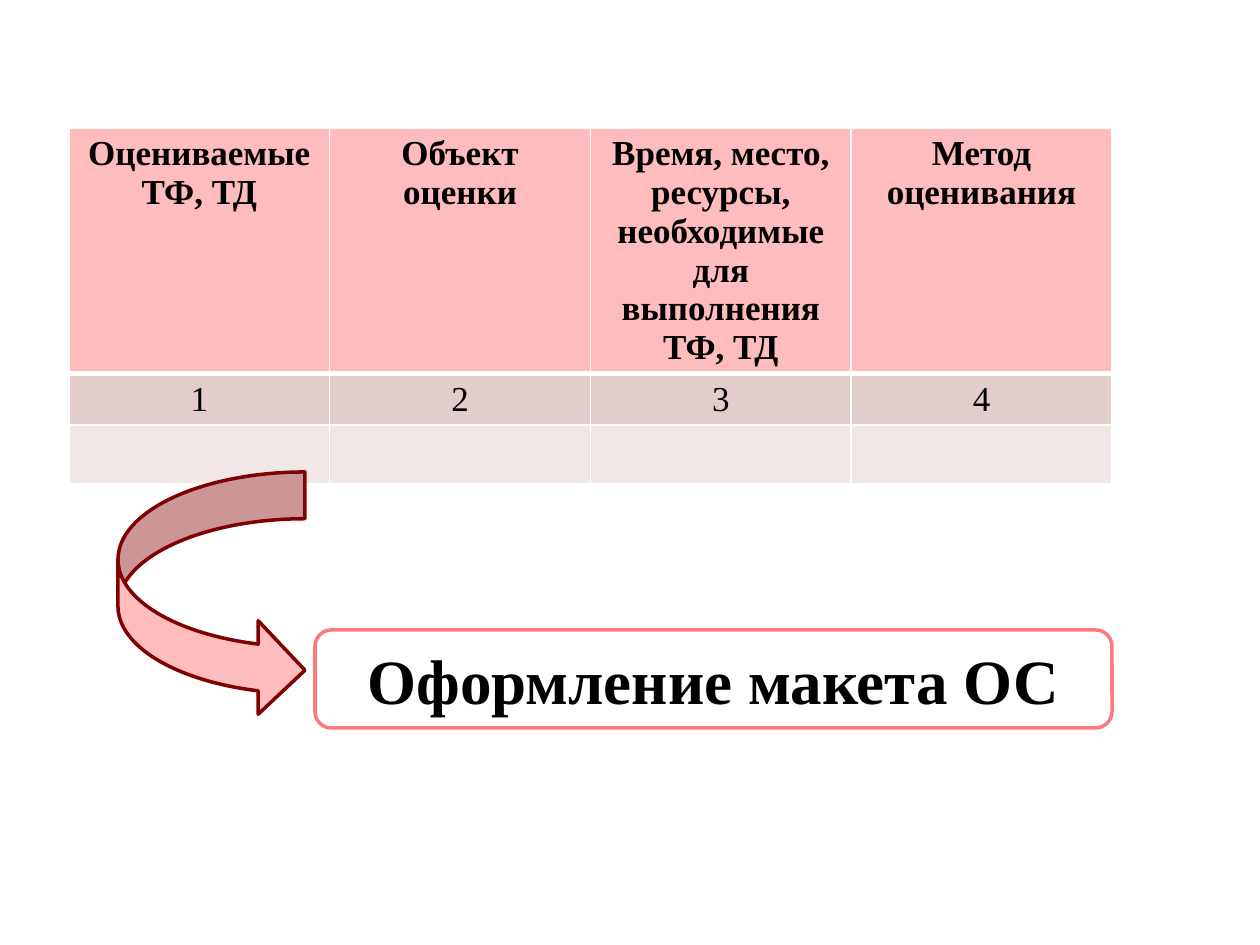
import pptx
import pptx.util
import pptx.dml.color
import pptx.enum.shapes
import pptx.enum.text
import pptx.oxml

PX = 914400 / 126
NS = "http://schemas.openxmlformats.org/drawingml/2006/main"


def rgb(h):
    return pptx.dml.color.RGBColor.from_string(h)


def add_text(tf, text, size, bold):
    p = tf.paragraphs[0]
    p.alignment = pptx.enum.text.PP_ALIGN.CENTER
    r = p.add_run()
    r.text = text
    r.font.name = "Times New Roman"
    r.font.size = pptx.util.Pt(size)
    r.font.bold = bold
    r.font.color.rgb = rgb("000000")


prs = pptx.Presentation()
prs.slide_width = int(1260 * PX)
prs.slide_height = int(945 * PX)
s = prs.slides.add_slide(prs.slide_layouts[6])

rows = [
    (245, "FFBCBC", ["Оцениваемые ТФ, ТД", "Объект оценки",
                     "Время, место, ресурсы, необходимые для выполнения ТФ, ТД",
                     "Метод оценивания"]),
    (51, "E3CCCC", ["1", "2", "3", "4"]),
    (59, "F1E7E7", ["", "", "", ""]),
]
box = [int(v * PX) for v in (69, 128, 1043, 355)]
table = s.shapes.add_table(len(rows), 4, *box).table
for i, (height, fill, texts) in enumerate(rows):
    table.rows[i].height = int(height * PX)
    for j, text in enumerate(texts):
        cell = table.cell(i, j)
        if text:
            add_text(cell.text_frame, text, 20, i == 0)
        tcPr = cell._tc.get_or_add_tcPr()
        for side in "LRTB":
            heavy = (i, side) in ((0, "B"), (1, "T"))
            width = pptx.util.Pt(3 if heavy else 1)
            tcPr.append(pptx.oxml.parse_xml(
                f'<a:ln{side} xmlns:a="{NS}" w="{width}"><a:solidFill>'
                f'<a:srgbClr val="FFFFFF"/></a:solidFill></a:ln{side}>'))
        cell.fill.solid()
        cell.fill.fore_color.rgb = rgb(fill)

MSO = pptx.enum.shapes.MSO_SHAPE
for kind, box, fill, line, text in [
    (MSO.CURVED_RIGHT_ARROW, (118, 472, 187, 245), "FFBCBC", "800101", ""),
    (MSO.ROUNDED_RECTANGLE, (315, 630, 797, 98), "FFFFFF", "FE7979", "Оформление макета ОС"),
]:
    sp = s.shapes.add_shape(kind, *[int(v * PX) for v in box])
    sp.shadow.inherit = False
    sp.fill.solid()
    sp.fill.fore_color.rgb = rgb(fill)
    sp.line.color.rgb = rgb(line)
    sp.line.width = pptx.util.Pt(2)
    if text:
        sp.text_frame.word_wrap = True
        add_text(sp.text_frame, text, 36, True)

prs.save("out.pptx")
